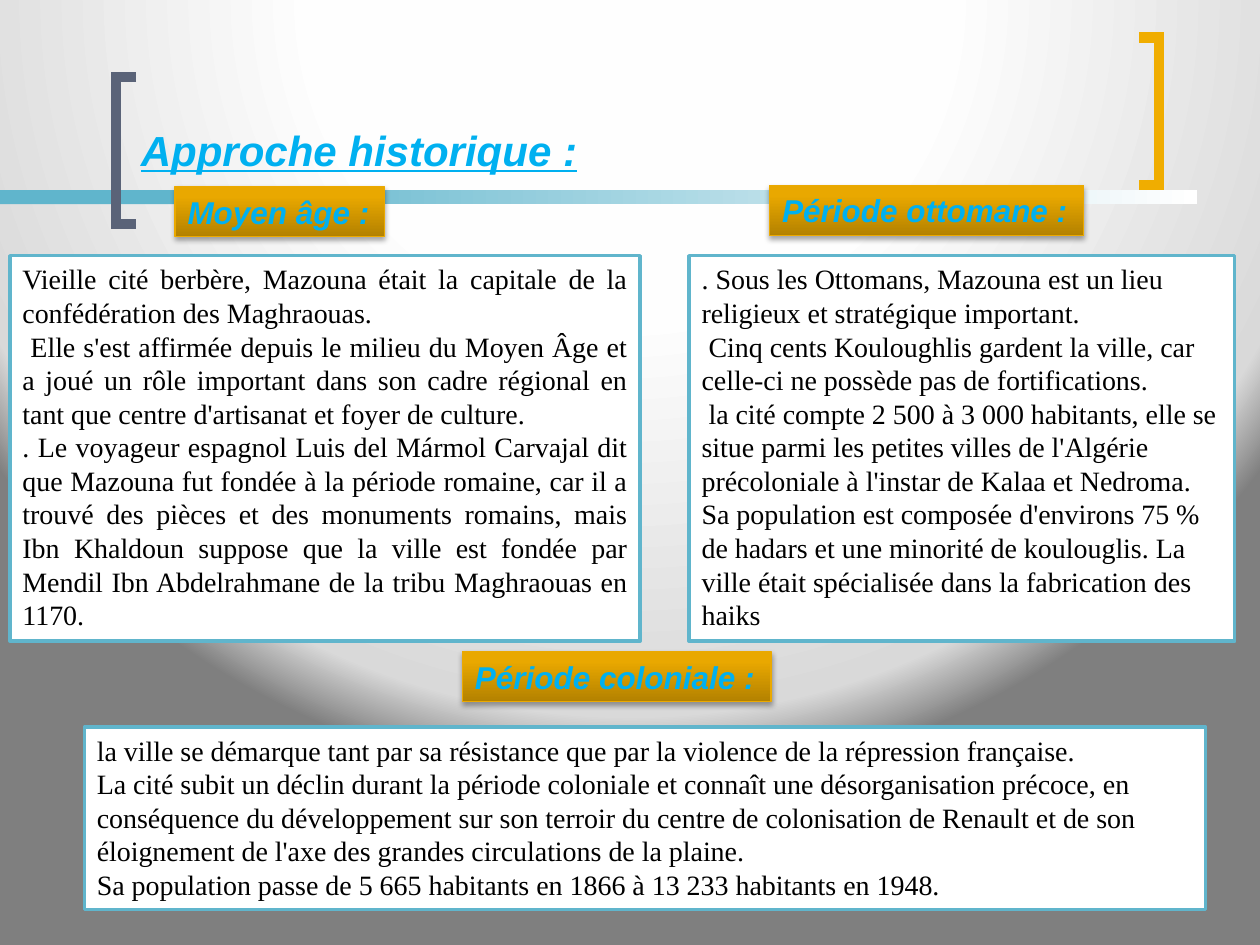
from lxml.etree import SubElement
from pptx import Presentation
from pptx.dml.color import RGBColor
from pptx.enum.shapes import MSO_SHAPE
from pptx.enum.text import MSO_ANCHOR, MSO_AUTO_SIZE, PP_ALIGN
from pptx.oxml.ns import qn
from pptx.util import Inches, Pt

COLS, ROWS = 1000, 750
WIDE, HIGH = Inches(10), Inches(7.5)
BLUE, GOLD, SLATE = "60B5CC", "F0AD00", "5A6378"
LABEL = {"name": "Arial", "size": Pt(18), "bold": True, "italic": True}
TITLE = {**LABEL, "size": Pt(24), "underline": True}
BODY = {"name": "Times New Roman", "size": Pt(16)}

LABELS = [
    ((139, 148, 166, 40), "Moyen âge :"),
    ((611, 147, 249, 40), "Période ottomane :"),
    ((367, 517, 245, 40), "Période coloniale :"),
]
PANELS = [
    ((8, 203, 500, 306), PP_ALIGN.JUSTIFY, [
        "Vieille cité berbère, Mazouna était la capitale de la confédération des Maghraouas.",
        " Elle s'est affirmée depuis le milieu du Moyen Âge et a joué un rôle important dans "
        "son cadre régional en tant que centre d'artisanat et foyer de culture.",
        ". Le voyageur espagnol Luis del Mármol Carvajal dit que Mazouna fut fondée à la "
        "période romaine, car il a trouvé des pièces et des monuments romains, mais Ibn "
        "Khaldoun suppose que la ville est fondée par Mendil Ibn Abdelrahmane de la tribu "
        "Maghraouas en 1170.",
    ]),
    ((547, 203, 433, 306), PP_ALIGN.LEFT, [
        ". Sous les Ottomans, Mazouna est un lieu religieux et stratégique important.",
        " Cinq cents Kouloughlis gardent la ville, car celle-ci ne possède pas de fortifications.",
        " la cité compte 2 500 à 3 000 habitants, elle se situe parmi les petites villes de "
        "l'Algérie précoloniale à l'instar de Kalaa et Nedroma.",
        "Sa population est composée d'environs 75 % de hadars et une minorité de koulouglis. "
        "La ville était spécialisée dans la fabrication des haiks",
    ]),
    ((67, 577, 890, 145), PP_ALIGN.LEFT, [
        "la ville se démarque tant par sa résistance que par la violence de la répression "
        "française.",
        "La cité subit un déclin durant la période coloniale et connaît une désorganisation "
        "précoce, en conséquence du développement sur son terroir du centre de colonisation "
        "de Renault et de son éloignement de l'axe des grandes circulations de la plaine.",
        "Sa population passe de 5 665 habitants en 1866 à 13 233 habitants en 1948.",
    ]),
]


def tint(code):
    """Turn a hex string into a colour."""
    return RGBColor.from_string(code)


def place(box):
    """Turn grid columns and rows into slide lengths."""
    left, top, width, height = box
    return (WIDE * left // COLS, HIGH * top // ROWS,
            WIDE * width // COLS, HIGH * height // ROWS)


def add(parent, tag, **attrs):
    """Append an XML child with attributes."""
    return SubElement(parent, qn(tag), {key: str(val) for key, val in attrs.items()})


def blend(fill, root, stops, angle=None):
    """Fill with colour stops, along an angle or in a circle from above."""
    fill.gradient()
    grad = root.find(".//" + qn("a:gradFill"))
    for child in list(grad):
        grad.remove(child)
    chain = add(grad, "a:gsLst")
    for pos, code in stops:
        add(add(chain, "a:gs", pos=pos * 1000), "a:srgbClr", val=code)
    if angle is None:
        ring = add(grad, "a:path", path="circle")
        add(ring, "a:fillToRect", l=50000, t=-80000, r=50000, b=180000)
    else:
        add(grad, "a:lin", ang=angle * 60000, scaled=0)


def block(slide, box, fill=None, line=None, width=0):
    """Add a flat rectangle."""
    shape = slide.shapes.add_shape(MSO_SHAPE.RECTANGLE, *place(box))
    shape.shadow.inherit = False
    if fill:
        shape.fill.solid()
        shape.fill.fore_color.rgb = tint(fill)
    if line:
        shape.line.color.rgb = tint(line)
        shape.line.width = Pt(width)
    else:
        shape.line.fill.background()
    return shape


def write(shape, texts, style, code, wrap=False, align=PP_ALIGN.LEFT):
    """Fill a shape with styled paragraphs."""
    frame = shape.text_frame
    frame.word_wrap = wrap
    frame.auto_size = MSO_AUTO_SIZE.SHAPE_TO_FIT_TEXT
    frame.vertical_anchor = MSO_ANCHOR.TOP
    for num, text in enumerate(texts):
        para = frame.add_paragraph() if num else frame.paragraphs[0]
        para.alignment = align
        run = para.add_run()
        run.text = text
        run.font.color.rgb = tint(code)
        for key, val in style.items():
            setattr(run.font, key, val)


def label(slide, box, text):
    """Add a shaded gold label with a soft shadow."""
    shape = block(slide, box, line="EBA900", width=0.75)
    stops = [(0, "B38100"), (80, "E9A800"), (100, "EAA800")]
    blend(shape.fill, shape._element, stops, 270)
    glow = add(shape._element.spPr.find(qn("a:effectLst")), "a:outerShdw",
               blurRad=Pt(3.1), dist=Pt(1.8), dir=90 * 60000, rotWithShape=0)
    add(add(glow, "a:srgbClr", val="000000"), "a:alpha", val=35000)
    write(shape, [text], LABEL, "00B0F0")


def panel(slide, box, align, texts):
    """Add a white text panel with a blue frame."""
    write(block(slide, box, "FFFFFF", BLUE, 2), texts, BODY, "000000", True, align)


def brace(slide, tip, spine, top, code):
    """Draw a square bracket from its tips to its spine."""
    low = top + 117
    spots = [place((col, row, 0, 0))[:2]
             for col, row in [(tip, top), (spine, top), (spine, low), (tip, low)]]
    pen = slide.shapes.build_freeform(*spots[0])
    pen.add_line_segments(spots[1:], close=False)
    shape = pen.convert_to_shape()
    shape.shadow.inherit = False
    shape.fill.background()
    shape.line.color.rgb = tint(code)
    shape.line.width = Pt(6)
    add(shape._element.spPr.find(qn("a:ln")), "a:miter", lim=800000)


def main():
    """Build the slide and save it."""
    deck = Presentation()
    deck.slide_width, deck.slide_height = WIDE, HIGH
    slide = deck.slides.add_slide(deck.slide_layouts[6])
    blend(slide.background.fill, slide._element,
          [(40, "FEFEFE"), (91, "D9D9D9"), (100, "7F7F7F")])
    block(slide, (0, 151, 233, 11), BLUE)
    fade = block(slide, (158, 151, 792, 11))
    blend(fade.fill, fade._element, [(0, BLUE), (100, "FFFFFF")], 0)
    brace(slide, 108, 92, 61, SLATE)
    brace(slide, 904, 920, 30, GOLD)
    title = slide.shapes.add_textbox(*place((102, 94, 370, 50)))
    write(title, ["Approche historique :"], TITLE, "00B0F0")
    for item in LABELS:
        label(slide, *item)
    for item in PANELS:
        panel(slide, *item)
    deck.save("out.pptx")


if __name__ == "__main__":
    main()
